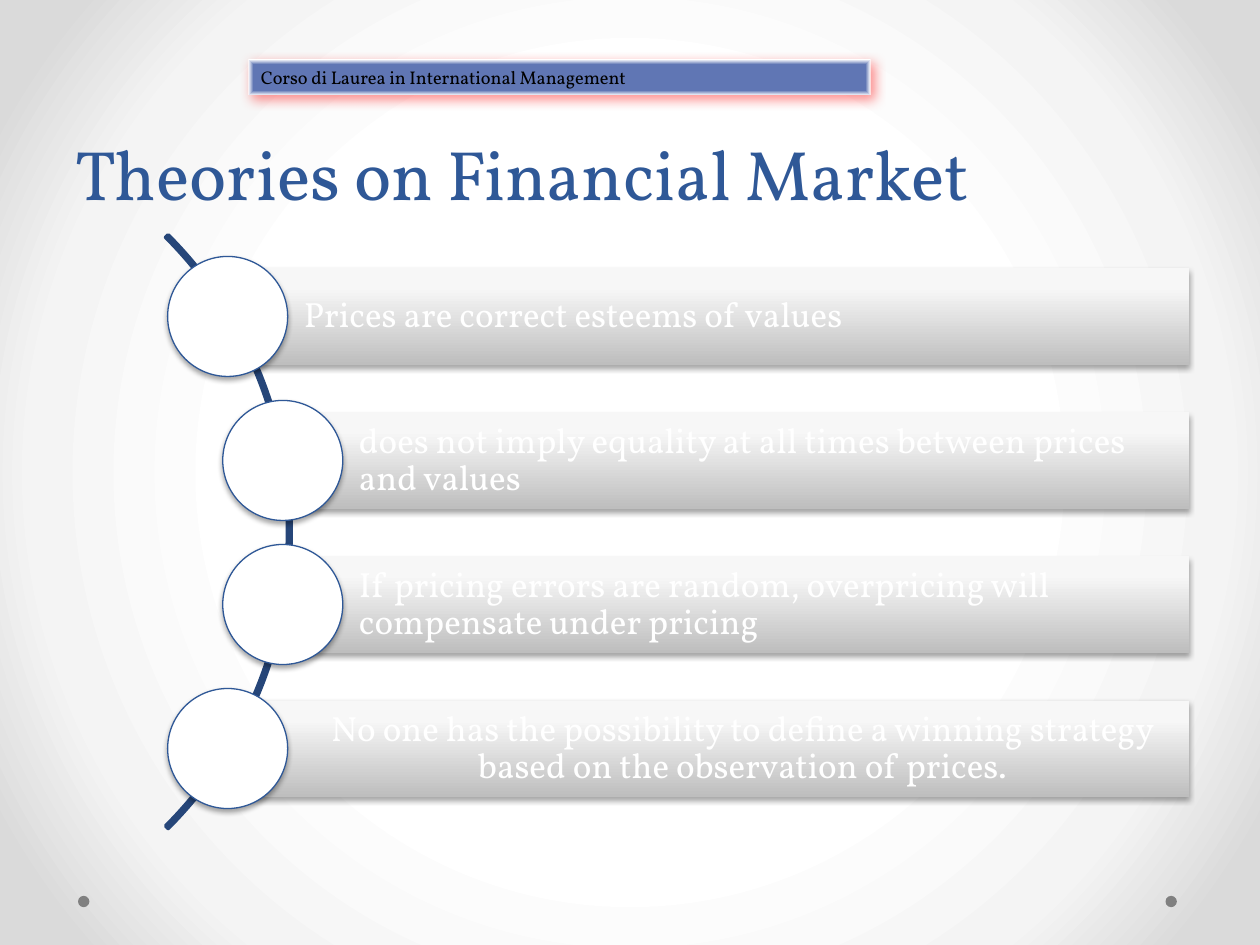
"""Build a slide listing theories on financial markets along an arc."""
from lxml import etree
from pptx import Presentation
from pptx.dml.color import RGBColor
from pptx.enum.shapes import MSO_SHAPE
from pptx.enum.text import MSO_ANCHOR, MSO_AUTO_SIZE, PP_ALIGN
from pptx.oxml import parse_xml
from pptx.util import Pt

RECTANGLE, OVAL, BLOCK_ARC = MSO_SHAPE.RECTANGLE, MSO_SHAPE.OVAL, MSO_SHAPE.BLOCK_ARC
LEFT, CENTER = PP_ALIGN.LEFT, PP_ALIGN.CENTER
MIDDLE, BOTTOM, TOP = MSO_ANCHOR.MIDDLE, MSO_ANCHOR.BOTTOM, MSO_ANCHOR.TOP
GROW = MSO_AUTO_SIZE.SHAPE_TO_FIT_TEXT

COURSE = "Corso di Laurea in International Management"
TITLE = "Theories on Financial Market"
THEORIES = [
    ("Prices are correct esteems of values", 130.1, LEFT),
    ("does not imply equality at all times between prices and values", 161.6, LEFT),
    ("If pricing errors are random, overpricing will compensate under pricing", 161.6, LEFT),
    ("No one has the possibility to define a winning strategy based on the "
     "observation of prices.", 130.1, CENTER),
]
COLORS = {
    "title": "2F5897", "arc": "264679", "header": "6076B4", "glow": "FF0000",
    "white": "FFFFFF", "black": "000000", "dot": "808080",
    "pale": "F4F4F4", "edge": "DADADA",
    "bar_low": "BEBEBE", "bar_mid": "F7F7F7", "bar_high": "F8F8F8",
}
FONT = "Vollkorn"
BAR_TOP, BAR_RIGHT, BAR_HEIGHT, PITCH = 153.4, 679.4, 54.9, 82.3
CIRCLE = 68.6
DOT_LEFTS, DOT_TOP, DOT = (44.6, 666), 511.9, 6.5
SOFT_SHADOW = ("black", 35, 3.1, 1.8, 90)
RED_SHADOW = ("glow", 43, 7, 3, 45)
RADIAL = '<a:path path="{}"><a:fillToRect l="50000" t="50000" r="50000" b="50000"/></a:path>'
UPWARD = '<a:lin ang="16200000" scaled="0"/>'
DRAWING = "http://schemas.openxmlformats.org/drawingml/2006/main"


def gradient(stops, direction):
    marks = "".join(
        f'<a:gs pos="{place * 1000}"><a:srgbClr val="{COLORS[name]}"/></a:gs>'
        for place, name in stops)
    return parse_xml(f'<a:gradFill xmlns:a="{DRAWING}" rotWithShape="1">'
                     f"<a:gsLst>{marks}</a:gsLst>{direction}</a:gradFill>")


def add_shadow(shape, color, alpha, blur, distance, angle):
    effects = shape._element.spPr.find(f"{{{DRAWING}}}effectLst")
    effects.append(parse_xml(
        f'<a:outerShdw xmlns:a="{DRAWING}" blurRad="{Pt(blur)}" dist="{Pt(distance)}" '
        f'dir="{angle * 60000}" algn="ctr" rotWithShape="0">'
        f'<a:srgbClr val="{COLORS[color]}"><a:alpha val="{alpha * 1000}"/></a:srgbClr>'
        "</a:outerShdw>"))


def add_shape(page, kind, box, fill=None, stops=None, direction=UPWARD,
              line=None, line_width=0.75, shadow=None):
    shape = page.shapes.add_shape(kind, *map(Pt, box))
    shape.shadow.inherit = False
    if stops:
        shape._element.spPr.find(f"{{{DRAWING}}}prstGeom").addnext(gradient(stops, direction))
    else:
        shape.fill.solid()
        shape.fill.fore_color.rgb = RGBColor.from_string(COLORS[fill])
    if line:
        shape.line.color.rgb = RGBColor.from_string(COLORS[line])
        shape.line.width = Pt(line_width)
    else:
        shape.line.fill.background()
    if shadow:
        add_shadow(shape, *shadow)
    return shape


def write(shape, text, size, color, align=LEFT, anchor=MIDDLE, spacing=None,
          insets=(7.2, 3.6, 7.2, 3.6), auto_size=None):
    frame = shape.text_frame
    frame.word_wrap = True
    frame.vertical_anchor = anchor
    if auto_size:
        frame.auto_size = auto_size
    (frame.margin_left, frame.margin_top,
     frame.margin_right, frame.margin_bottom) = map(Pt, insets)
    para = frame.paragraphs[0]
    para.alignment = align
    if spacing:
        para.line_spacing = spacing
    span = para.add_run()
    span.text = text
    span.font.name = FONT
    span.font.size = Pt(size)
    span.font.color.rgb = RGBColor.from_string(COLORS[color])


def set_background(page):
    page.background.fill.solid()
    properties = page._element.cSld.bg.bgPr
    properties.replace(properties[0], gradient(
        [(50, "white"), (76, "pale"), (92, "edge")], RADIAL.format("circle")))
    if properties.find(f"{{{DRAWING}}}effectLst") is None:
        etree.SubElement(properties, f"{{{DRAWING}}}effectLst")


def add_theories(page):
    arc = add_shape(page, BLOCK_ARC, (-313.2, 64.1, 479.5, 479.5), fill="arc",
                    line="arc", line_width=2.25)
    for index, value in enumerate((189, 27, 0.004)):
        arc.adjustments[index] = value
    for row, (text, left, align) in enumerate(THEORIES):
        top = BAR_TOP + row * PITCH
        bar = add_shape(page, RECTANGLE, (left, top, BAR_RIGHT - left, BAR_HEIGHT),
                        stops=[(0, "bar_low"), (80, "bar_mid"), (100, "bar_high")],
                        shadow=SOFT_SHADOW)
        write(bar, text, 20, "white", align=align, spacing=0.9,
              insets=(43.5, 4.3, 4.3, 4.3))
        circle_top = top + (BAR_HEIGHT - CIRCLE) / 2
        add_shape(page, OVAL, (left - CIRCLE / 2, circle_top, CIRCLE, CIRCLE),
                  fill="white", line="title", shadow=SOFT_SHADOW)


def main():
    deck = Presentation()
    deck.slide_width, deck.slide_height = Pt(720), Pt(540)
    page = deck.slides.add_slide(deck.slide_layouts[6])
    set_background(page)
    for left in DOT_LEFTS:
        add_shape(page, OVAL, (left, DOT_TOP, DOT, DOT), fill="dot")
    title = page.shapes.add_textbox(*map(Pt, (36, 51, 648, 75)))
    write(title, TITLE, 40, "title", anchor=BOTTOM, spacing=Pt(58))
    add_theories(page)
    header = add_shape(page, RECTANGLE, (142, 34, 355.5, 20.6),
                       stops=[(72, "header"), (100, "white")],
                       direction=RADIAL.format("shape"), shadow=RED_SHADOW)
    write(header, COURSE, 10.5, "black", anchor=TOP, auto_size=GROW)
    deck.save("out.pptx")


if __name__ == "__main__":
    main()
